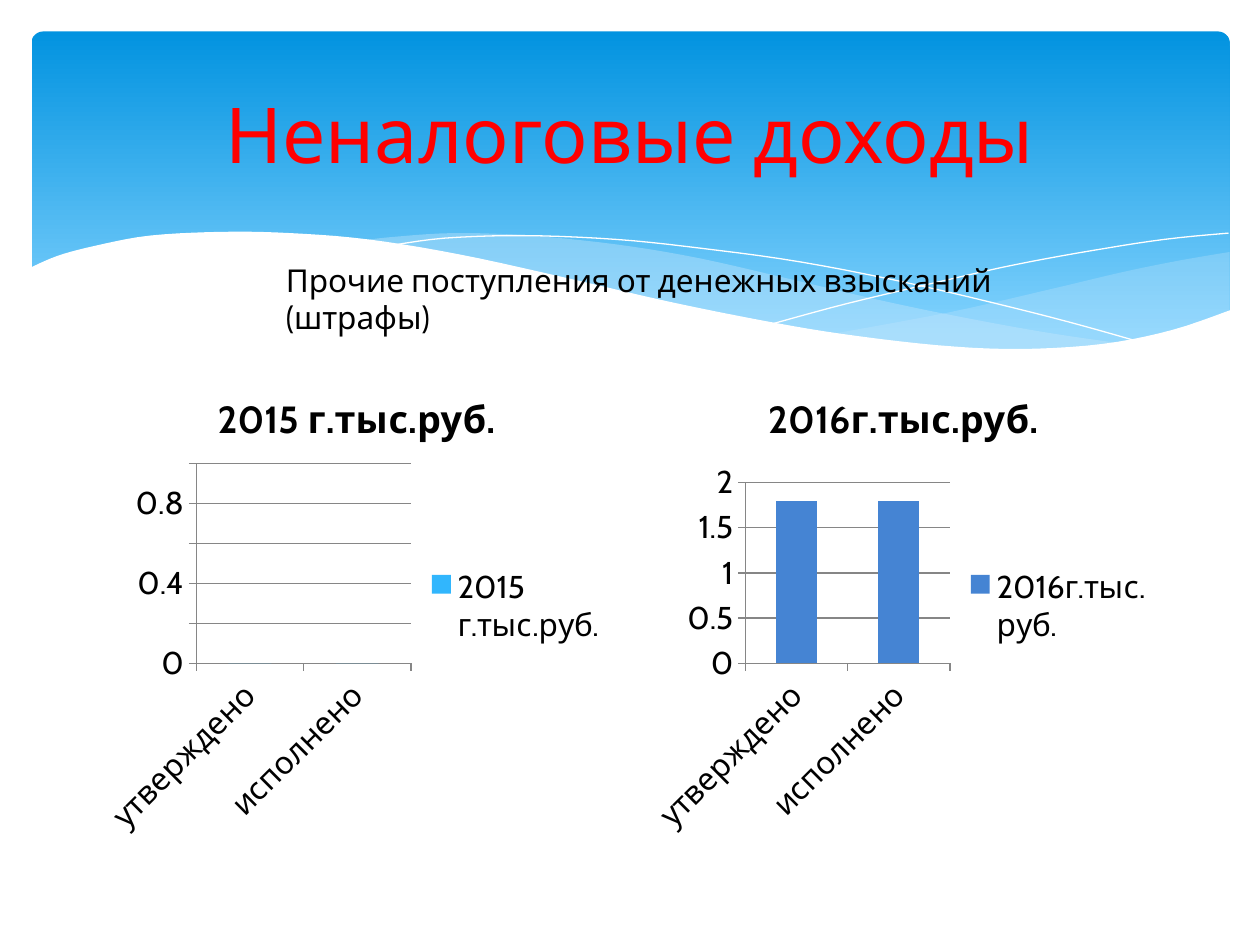
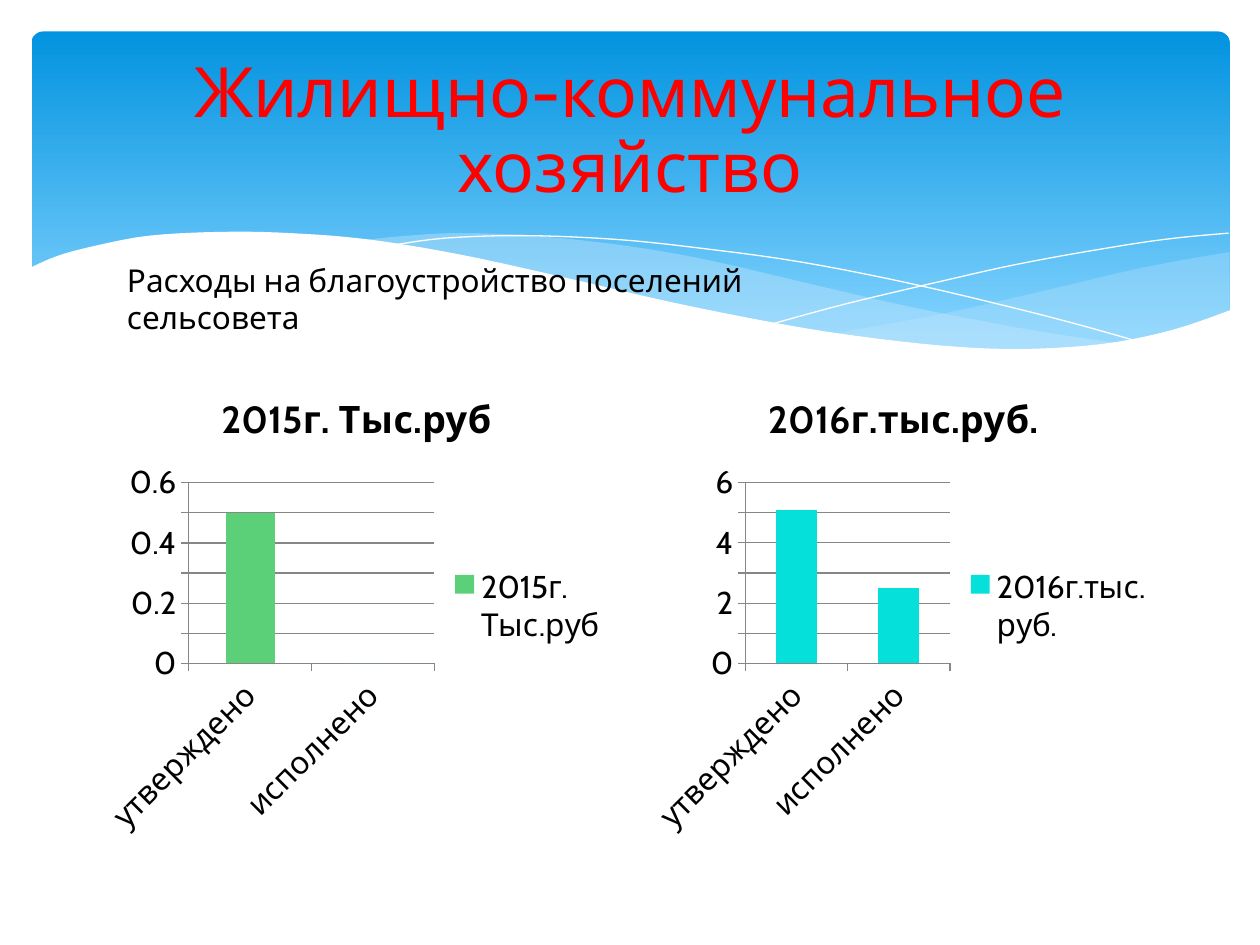
import pptx
import pptx.util
import pptx.dml.color
import pptx.chart.data
import pptx.enum.chart
import pptx.enum.shapes
import pptx.enum.text
import pptx.oxml.ns
import lxml.etree

Inches = pptx.util.Inches
Pt = pptx.util.Pt
XL = pptx.enum.chart.XL_CHART_TYPE

CATEGORIES = ["утверждено", "исполнено"]
CHART_LEFTS = [0.74, 5.08]

RIGHT_SWELL = [
    [(9.76, 2), (9.35, 2.07), (8.91, 2.16), (8.32, 2.3), (7.53, 2.48), (6.61, 2.65)],
    [(6.61, 2.65), (7.19, 2.72), (7.69, 2.77), (8.14, 2.78), (8.63, 2.75),
     (9.05, 2.69), (9.42, 2.59), (9.76, 2.47)],
]
MIDDLE_SWELL = [
    [(8.93, 2.73), (8.37, 2.65), (7.75, 2.54), (7.06, 2.4), (6.29, 2.22), (5.55, 2.05),
     (4.89, 1.94), (4.2, 1.87), (3.61, 1.85), (3.13, 1.88), (2.86, 1.91)],
    [(2.86, 1.91), (3.62, 2.03), (4.49, 2.22), (5.3, 2.4), (6.01, 2.55), (6.65, 2.66),
     (7.22, 2.74), (7.85, 2.78), (8.38, 2.78), (8.93, 2.73)],
]
FALLING_LINE = [
    [(3.09, 1.95), (3.53, 1.89), (4.16, 1.87), (4.89, 1.9), (5.56, 1.97), (6.36, 2.08),
     (7.27, 2.26), (8.31, 2.51), (9.07, 2.72)],
]
RISING_LINE = [
    [(6.13, 2.57), (6.72, 2.41), (7.48, 2.23), (8.06, 2.1), (8.66, 1.99),
     (9.24, 1.9), (9.75, 1.85)],
]
WHITE_WAVE = [
    [(9.77, 2.46), (9.3, 2.62), (8.75, 2.73), (8.09, 2.77), (7.44, 2.74), (6.68, 2.65),
     (6.03, 2.54), (5.29, 2.39), (4.47, 2.2), (3.65, 2.02), (2.92, 1.9), (2.3, 1.85),
     (1.77, 1.84), (1.19, 1.87), (0.76, 1.95), (0.46, 2.03), (0.23, 2.13)],
    [(0.23, 3.29), (9.77, 3.29)],
]


def rgb(hex_color):
    return pptx.dml.color.RGBColor.from_string(hex_color)


def smooth(knots, steps=5):
    if len(knots) < 3:
        return knots
    padded = [knots[0], *knots, knots[-1]]
    points = [knots[0]]
    for a, b, c, d in zip(padded, padded[1:], padded[2:], padded[3:]):
        for step in range(1, steps + 1):
            t = step / steps
            points.append(tuple(
                (2 * q + (r - p) * t + (2 * p - 5 * q + 4 * r - s) * t ** 2
                 + (3 * q - p - 3 * r + s) * t ** 3) / 2
                for p, q, r, s in zip(a, b, c, d)))
    return points


class Deck:
    font_name = "Cabin"
    title_color = "FF0000"
    text_color = "000000"
    grid_color = "868686"
    swell_color = "C6E7FC"
    white = "FFFFFF"
    band_stops = [(0, "0293E0"), (0.9, "83D3FE")]

    def __init__(self):
        self.presentation = pptx.Presentation()
        self.presentation.slide_width = Inches(10)
        self.presentation.slide_height = Inches(7.5)
        self.slide = None

    def new_slide(self):
        self.slide = self.presentation.slides.add_slide(self.presentation.slide_layouts[6])
        self.band()
        self.curve(RIGHT_SWELL, fill=self.swell_color, opacity=29)
        self.curve(MIDDLE_SWELL, fill=self.swell_color, opacity=40)
        self.curve(FALLING_LINE)
        self.curve(RISING_LINE)
        self.curve(WHITE_WAVE, fill=self.white)

    def band(self):
        band = self.slide.shapes.add_shape(
            pptx.enum.shapes.MSO_SHAPE.ROUNDED_RECTANGLE,
            Inches(0.25), Inches(0.25), Inches(9.51), Inches(2.7))
        band.adjustments[0] = 0.034
        band.shadow.inherit = False
        band.line.fill.background()
        band.fill.gradient()
        band.fill.gradient_angle = 270
        for stop, (position, color) in zip(band.fill.gradient_stops, self.band_stops):
            stop.position = position
            stop.color.rgb = rgb(color)

    def curve(self, edges, fill=None, opacity=100):
        points = [(Inches(x), Inches(y)) for edge in edges for x, y in smooth(edge)]
        builder = self.slide.shapes.build_freeform(*points[0], scale=1)
        builder.add_line_segments(points[1:], close=fill is not None)
        outline = builder.convert_to_shape()
        outline.shadow.inherit = False
        if fill is None:
            outline.fill.background()
            outline.line.color.rgb = rgb(self.white)
            outline.line.width = Pt(0)
            return
        outline.line.fill.background()
        outline.fill.solid()
        outline.fill.fore_color.rgb = rgb(fill)
        if opacity < 100:
            color = outline.fill._xPr.find(".//" + pptx.oxml.ns.qn("a:srgbClr"))
            alpha = lxml.etree.SubElement(color, pptx.oxml.ns.qn("a:alpha"))
            alpha.set("val", str(opacity * 1000))

    def set_font(self, font, size, color):
        font.name = self.font_name
        font.size = Pt(size)
        font.color.rgb = rgb(color)

    def text(self, words, left, top, width, height, size, color):
        box = self.slide.shapes.add_textbox(
            Inches(left), Inches(top), Inches(width), Inches(height))
        box.text_frame.word_wrap = True
        paragraph = box.text_frame.paragraphs[0]
        paragraph.text = words
        self.set_font(paragraph.font, size, color)
        return box.text_frame

    def title(self, words, size, line_spacing):
        frame = self.text(words, 0.5, 0.37, 9, 1.37, size, self.title_color)
        frame.vertical_anchor = pptx.enum.text.MSO_ANCHOR.MIDDLE
        frame.paragraphs[0].alignment = pptx.enum.text.PP_ALIGN.CENTER
        frame.paragraphs[0].line_spacing = line_spacing

    def caption(self, words, left, width):
        self.text(words, left, 2.02, width, 0.4, 18, self.text_color)

    def chart(self, kind, left, name, values, color):
        data = pptx.chart.data.CategoryChartData()
        data.categories = CATEGORIES
        data.add_series(name, values)
        chart = self.slide.shapes.add_chart(
            kind, Inches(left), Inches(2.93), Inches(4.18), Inches(3.77), data).chart
        self.set_font(chart.font, 18, self.text_color)

        chart.has_title = True
        heading = chart.chart_title.text_frame.paragraphs[0]
        heading.text = name
        self.set_font(heading.font, 21.6, self.text_color)
        heading.font.bold = True

        chart.has_legend = True
        chart.legend.position = pptx.enum.chart.XL_LEGEND_POSITION.RIGHT
        chart.legend.include_in_layout = False

        chart.value_axis.has_major_gridlines = True
        for part in (chart.value_axis, chart.category_axis, chart.value_axis.major_gridlines):
            part.format.line.color.rgb = rgb(self.grid_color)
            part.format.line.width = Pt(0.75)

        plot = chart.plots[0]
        plot.vary_by_categories = False
        plot.gap_width = 150
        if kind == XL.COLUMN_STACKED:
            plot.overlap = 100
        bars = plot.series[0].format.fill
        bars.solid()
        bars.fore_color.rgb = rgb(color)


def main():
    deck = Deck()
    topics = [
        ("Неналоговые доходы", 44, 1,
         "Прочие поступления от денежных взысканий (штрафы)", 2.17, 6.29,
         XL.COLUMN_CLUSTERED,
         [("2015 г.тыс.руб.", [0, 0], "31B6FD"),
          ("2016г.тыс.руб.", [1.8, 1.8], "4584D3")]),
        ("Жилищно-коммунальное хозяйство", 39.6, 0.9,
         "Расходы на благоустройство поселений сельсовета", 0.91, 5.9,
         XL.COLUMN_STACKED,
         [("2015г. Тыс.руб", [0.5, 0], "5BD078"),
          ("2016г.тыс.руб.", [5.1, 2.5], "05E0DB")]),
    ]
    for title, size, spacing, caption, left, width, kind, years in topics:
        deck.new_slide()
        deck.title(title, size, spacing)
        for chart_left, (name, values, color) in zip(CHART_LEFTS, years):
            deck.chart(kind, chart_left, name, values, color)
        deck.caption(caption, left, width)
    deck.presentation.save("out.pptx")


if __name__ == "__main__":
    main()
